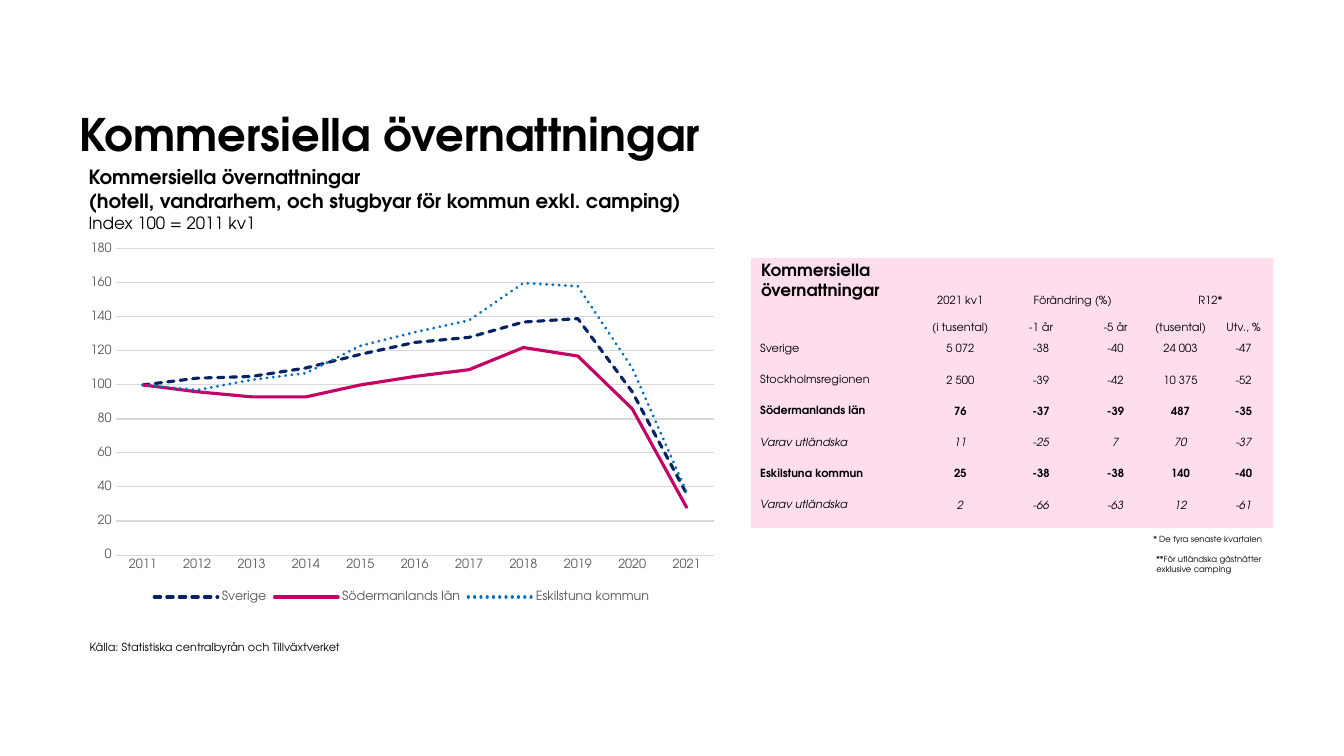
"""Build the slide on commercial overnight stays: index chart and key figures."""
from lxml.etree import SubElement
from pptx import Presentation
from pptx.chart.data import CategoryChartData
from pptx.dml.color import RGBColor
from pptx.enum.chart import XL_CHART_TYPE, XL_LEGEND_POSITION, XL_MARKER_STYLE, XL_TICK_MARK
from pptx.enum.dml import MSO_LINE
from pptx.enum.shapes import MSO_SHAPE
from pptx.enum.text import MSO_ANCHOR, PP_ALIGN
from pptx.oxml import parse_xml
from pptx.oxml.ns import nsdecls, qn
from pptx.util import Inches, Pt

FONT = "TeX Gyre Adventor"
COLORS = {"text": "000000", "axis": "595959", "grid": "D9D9D9", "panel": "FEDEED",
          "sverige": "052364", "lan": "C40064", "kommun": "006EBF"}


def style(font, size, color="text", bold=False, italic=False):
    font.name, font.size, font.bold, font.italic = FONT, Pt(size), bold, italic
    font.color.rgb = RGBColor.from_string(COLORS[color])


def add_text(left, top, width, height, text, size, bold=False, wrap=True):
    frame = slide.shapes.add_textbox(
        Inches(left), Inches(top), Inches(width), Inches(height)).text_frame
    frame.word_wrap = wrap
    frame.text = text
    for paragraph in frame.paragraphs:
        style(paragraph.font, size, bold=bold)
    return frame


prs = Presentation()
prs.slide_width, prs.slide_height = Inches(13.33), Inches(7.5)
slide = prs.slides.add_slide(prs.slide_layouts[6])

heading = add_text(0.79, 0.37, 9.22, 1.22, "Kommersiella övernattningar", 32, bold=True)
heading.vertical_anchor = MSO_ANCHOR.BOTTOM
heading.margin_left = heading.margin_right = heading.margin_top = heading.margin_bottom = 0

add_text(0.79, 6.3, 2.77, 0.24, "Källa: Statistiska centralbyrån och Tillväxtverket", 8, wrap=False)

panel = slide.shapes.add_shape(
    MSO_SHAPE.RECTANGLE, Inches(7.45), Inches(2.56), Inches(5.18), Inches(2.68))
panel.shadow.inherit = False
panel.fill.solid()
panel.fill.fore_color.rgb = RGBColor.from_string(COLORS["panel"])
panel.line.fill.background()

add_text(7.45, 2.53, 2.4, 0.3, "Kommersiella övernattningar", 12, bold=True)
add_text(11.34, 5.25, 1.29, 0.2, "* De fyra senaste kvartalen", 6, wrap=False)
add_text(11.37, 5.45, 1.24, 0.3, "**För utländska gästnätter exklusive camping", 6)

chart_heading = add_text(
    0.78, 1.59, 6.45, 0.77,
    "Kommersiella övernattningar\n(hotell, vandrarhem, och stugbyar för kommun exkl. camping)\v",
    14, bold=True)
index_note = chart_heading.paragraphs[1].add_run()
index_note.text = "Index 100 = 2011 kv1"
style(index_note.font, 12)

rows = [
    ("", "2021 kv1", "Förändring (%)", "", "R12*", ""),
    ("", "(i tusental)", "-1 år", "-5 år", "(tusental)", "Utv., %"),
    ("Sverige", "5 072", "-38", "-40", "24 003", "-47"),
    ("Stockholmsregionen", "2 500", "-39", "-42", "10 375", "-52"),
    ("Södermanlands län", "76", "-37", "-39", "487", "-35"),
    ("Varav utländska", "11", "-25", "7", "70", "-37"),
    ("Eskilstuna kommun", "25", "-38", "-38", "140", "-40"),
    ("Varav utländska", "2", "-66", "-63", "12", "-61"),
]
bold_rows, italic_rows = (4, 6), (5, 7)
figures_frame = slide.shapes.add_table(
    len(rows), 6, Inches(7.46), Inches(2.78), Inches(5.18), Inches(2.38))
figures = figures_frame.table
figures.first_row = figures.horz_banding = False
figures._tbl.tblPr.find(qn("a:tableStyleId")).text = "{2D5ABB26-0587-4C30-8999-92F81FD0307C}"
for column, width in zip(figures.columns, (1.69, 0.75, 0.85, 0.63, 0.66, 0.59)):
    column.width = Inches(width)
for r, values in enumerate(rows):
    figures.rows[r].height = Inches((0.26, 0.27)[r] if r < 2 else 0.31)
    for c, value in enumerate(values):
        cell = figures.cell(r, c)
        cell.fill.background()
        cell.margin_left = Inches(0.01 if c else 0.08)
        cell.margin_right = cell.margin_top = Inches(0.01 if c else 0)
        cell.margin_bottom = 0
        cell.vertical_anchor = MSO_ANCHOR.BOTTOM if r < 2 else MSO_ANCHOR.MIDDLE
        cell.text = value
        paragraph = cell.text_frame.paragraphs[0]
        paragraph.alignment = PP_ALIGN.CENTER if c else PP_ALIGN.LEFT
        style(paragraph.font, 8, bold=r in bold_rows, italic=r in italic_rows)
        if not value:
            SubElement(paragraph._p, qn("a:endParaRPr"), sz="800")
for c in (2, 4):
    figures.cell(0, c).merge(figures.cell(0, c + 1))

series_specs = [
    ("Sverige", "sverige", MSO_LINE.SQUARE_DOT,
     (100, 104, 105, 110, 118, 125, 128, 137, 139, 96, 36)),
    ("Södermanlands län", "lan", MSO_LINE.SOLID,
     (100, 96, 93, 93, 100, 105, 109, 122, 117, 86, 28)),
    ("Eskilstuna kommun", "kommun", MSO_LINE.ROUND_DOT,
     (100, 97, 103, 107, 123, 131, 138, 160, 158, 110, 37)),
]
stays = CategoryChartData()
stays.categories = [str(year) for year in range(2011, 2022)]
for name, color, dash, values in series_specs:
    stays.add_series(name, values)
chart = slide.shapes.add_chart(
    XL_CHART_TYPE.LINE, Inches(0.76), Inches(2.36), Inches(6.45), Inches(3.66), stays).chart
style(chart.font, 10)
chart.has_title = False
chart.has_legend = True
chart.legend.position = XL_LEGEND_POSITION.BOTTOM
chart.legend.include_in_layout = False
style(chart.legend.font, 9, "axis")
chart.plots[0].vary_by_categories = False
for series, (name, color, dash, values) in zip(chart.plots[0].series, series_specs):
    series.smooth = False
    series.marker.style = XL_MARKER_STYLE.NONE
    line = series.format.line
    line.width = Pt(2.25)
    line.color.rgb = RGBColor.from_string(COLORS[color])
    line.dash_style = dash
    line._get_or_add_ln().set("cap", "rnd")

years, index = chart.category_axis, chart.value_axis
for axis in (years, index):
    axis.major_tick_mark = axis.minor_tick_mark = XL_TICK_MARK.NONE
    style(axis.tick_labels.font, 9, "axis")
index.minimum_scale, index.maximum_scale, index.major_unit = 0, 180, 20
index.format.line.fill.background()
for line in (years.format.line, index.major_gridlines.format.line):
    line.width = Pt(0.75)
    line.color.rgb = RGBColor.from_string(COLORS["grid"])

plot_area = chart._chartSpace.chart.plotArea
for layout in plot_area.findall(qn("c:layout")):
    plot_area.remove(layout)
plot_area.insert(0, parse_xml(
    f'<c:layout {nsdecls("c")}><c:manualLayout><c:layoutTarget val="inner"/>'
    '<c:xMode val="edge"/><c:yMode val="edge"/><c:x val="0.06"/><c:y val="0.03"/>'
    '<c:w val="0.92"/><c:h val="0.83"/></c:manualLayout></c:layout>'))

prs.save("out.pptx")
